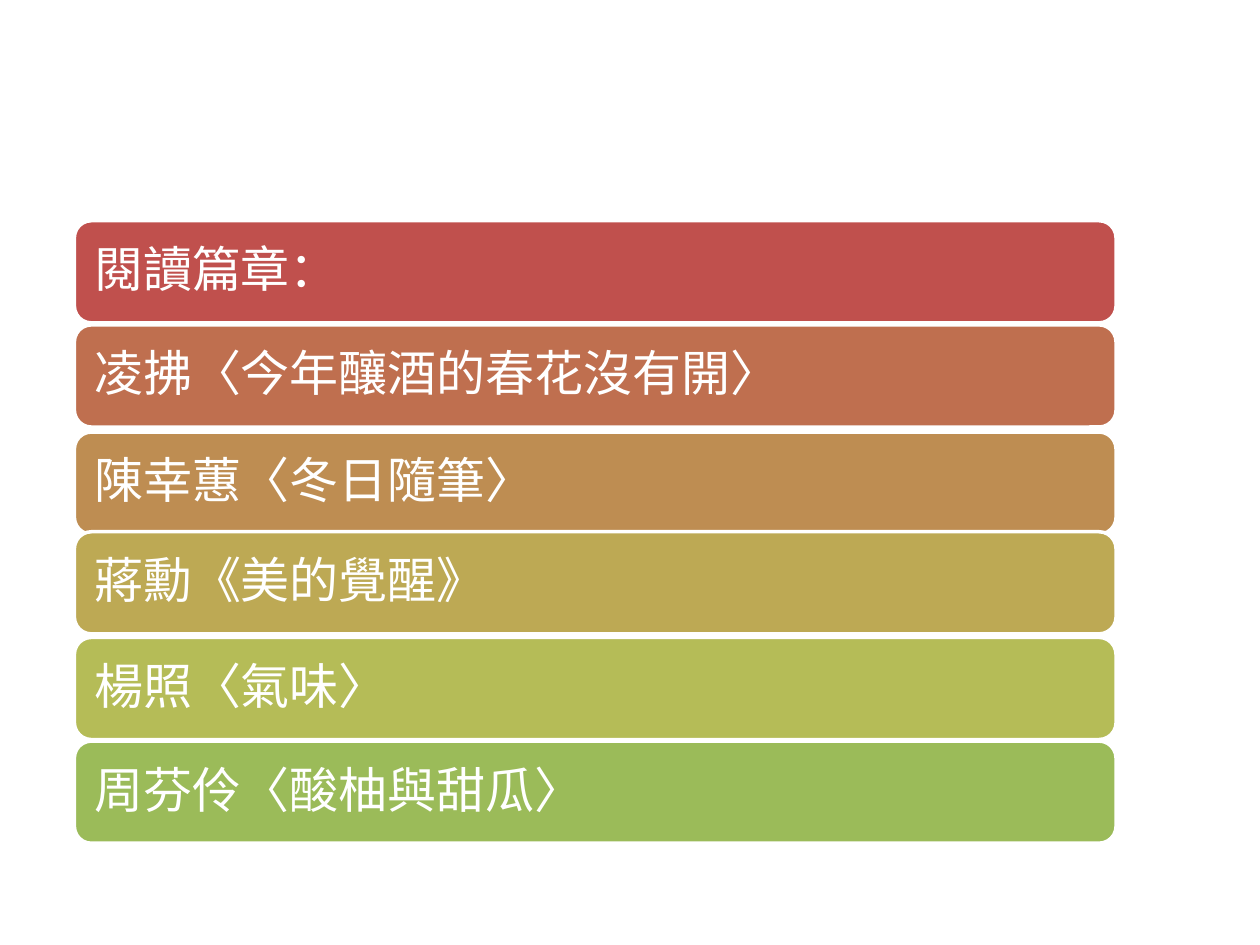
"""Build a reading-list slide with six coloured bars."""
from lxml import etree
from pptx import Presentation
from pptx.dml.color import RGBColor
from pptx.enum.shapes import MSO_SHAPE
from pptx.enum.text import MSO_ANCHOR, PP_ALIGN
from pptx.oxml.ns import qn
from pptx.util import Cm, Pt

ROUNDED = MSO_SHAPE.ROUNDED_RECTANGLE
MIDDLE = MSO_ANCHOR.MIDDLE
LEFT = PP_ALIGN.LEFT

THEME = {
    "font": "Noto Sans CJK SC",
    "size": Pt(28),
    "line": Pt(2),
    "white": RGBColor.from_string("FFFFFF"),
}
INSET = Cm(0.3)
FRAME = {
    "word_wrap": True,
    "vertical_anchor": MIDDLE,
    "margin_left": INSET,
    "margin_right": INSET,
    "margin_top": INSET,
    "margin_bottom": INSET,
}
PARAGRAPH = {"alignment": LEFT, "line_spacing": 0.9, "space_after": Pt(9.8)}
FONT = {"name": THEME["font"], "size": THEME["size"]}

BARS = [
    (4.45, "C0504D", "閱讀篇章："),
    (6.55, "BF6F4F", "凌拂〈今年釀酒的春花沒有開〉"),
    (8.71, "BE8D52", "陳幸蕙〈冬日隨筆〉"),
    (10.72, "BDA954", "蔣勳《美的覺醒》"),
    (12.85, "B5BC57", "楊照〈氣味〉"),
    (14.94, "9BBB59", "周芬伶〈酸柚與甜瓜〉"),
]


def apply(target, values):
    for name, value in values.items():
        setattr(target, name, value)


prs = Presentation()
prs.slide_width, prs.slide_height = Cm(25.4), Cm(19.05)
s = prs.slides.add_slide(prs.slide_layouts[6])

for top, color, text in BARS:
    sp = s.shapes.add_shape(ROUNDED, Cm(1.5), Cm(top), Cm(21), Cm(2.06))
    sp.shadow.inherit = False
    sp.fill.solid()
    sp.fill.fore_color.rgb = RGBColor.from_string(color)
    sp.line.color.rgb = THEME["white"]
    sp.line.width = THEME["line"]

    tf = sp.text_frame
    apply(tf, FRAME)
    p = tf.paragraphs[0]
    apply(p, PARAGRAPH)
    r = p.add_run()
    r.text = text
    apply(r.font, FONT)
    r.font.color.rgb = THEME["white"]
    ea = etree.SubElement(r.font._element, qn("a:ea"))
    ea.set("typeface", THEME["font"])

prs.save("out.pptx")
